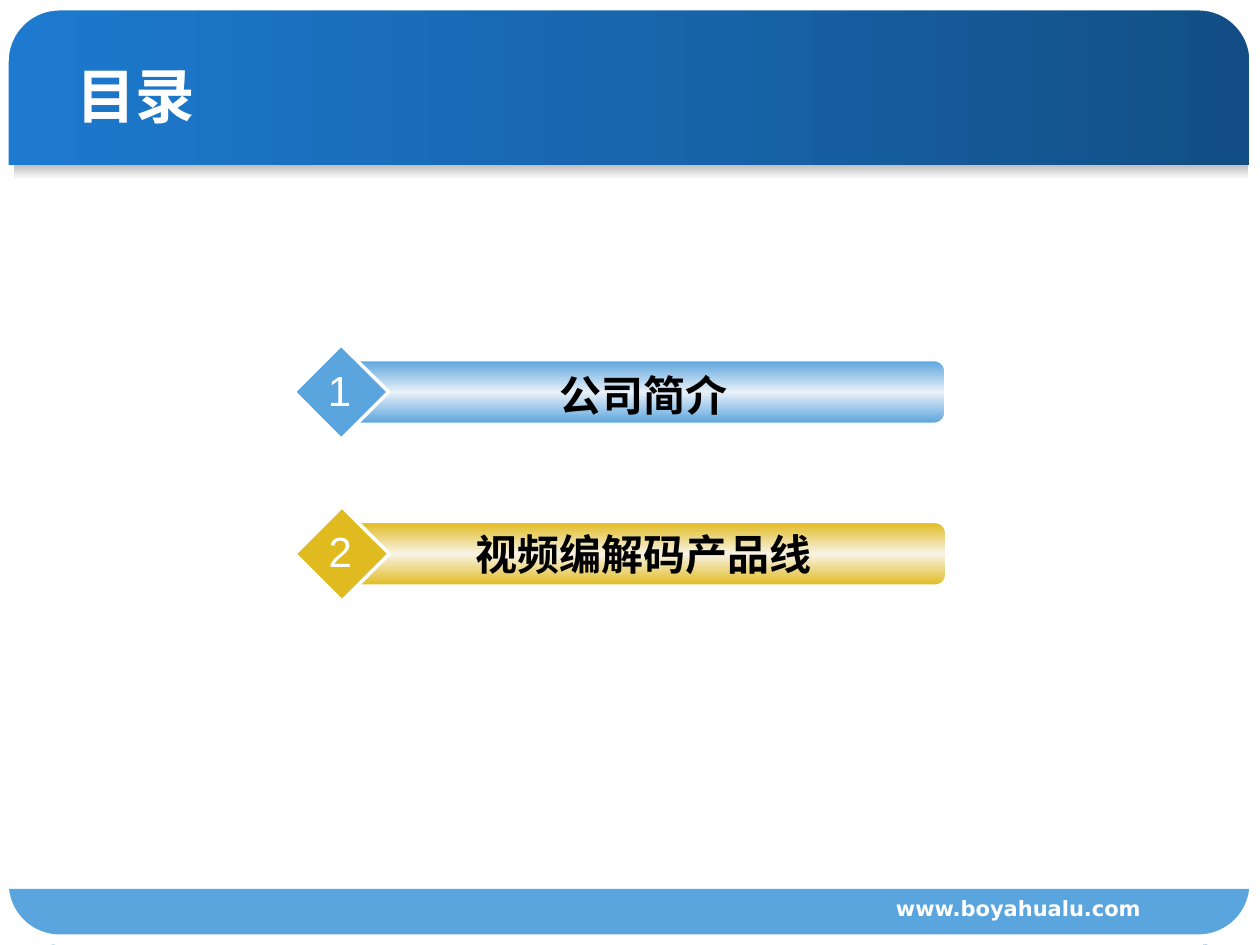
import lxml.etree
import pptx
import pptx.dml.color
import pptx.enum.shapes
import pptx.enum.text
import pptx.oxml.ns
import pptx.util

Pt = pptx.util.Pt
KIND = pptx.enum.shapes.MSO_SHAPE
ALIGN = pptx.enum.text.PP_ALIGN
ANCHOR = pptx.enum.text.MSO_ANCHOR
qn = pptx.oxml.ns.qn


def color(code):
    """Return the colour for a hex string."""
    return pptx.dml.color.RGBColor.from_string(code)


def blend(shape, stops, angle):
    """Fill a shape with evenly spaced gradient stops."""
    shape.fill.gradient()
    shape.fill.gradient_angle = angle
    group = next(shape._element.iter(qn("a:gsLst")))
    for old in list(group):
        group.remove(old)
    for index, code in enumerate(stops):
        place = round(100000 * index / (len(stops) - 1))
        stop = lxml.etree.SubElement(group, qn("a:gs"), pos=str(place))
        lxml.etree.SubElement(stop, qn("a:srgbClr"), val=code)


def style(shape, fill=None, line=None, width=1, angle=270):
    """Set the fill and line of a shape and drop its shadow."""
    shape.shadow.inherit = False
    if isinstance(fill, list):
        blend(shape, fill, angle)
    elif fill:
        shape.fill.solid()
        shape.fill.fore_color.rgb = color(fill)
    else:
        shape.fill.background()
    if line:
        shape.line.color.rgb = color(line)
        shape.line.width = Pt(width)
    else:
        shape.line.fill.background()


def block(slide, kind, box, adjust=None, **look):
    """Add a preset shape."""
    shape = slide.shapes.add_shape(kind, *map(Pt, box))
    if adjust is not None:
        shape.adjustments[0] = adjust
    style(shape, **look)


def corner(slide, points):
    """Add a white corner piece."""
    dots = [(Pt(x), Pt(y)) for x, y in points]
    build = slide.shapes.build_freeform(*dots[0])
    build.add_line_segments(dots[1:], close=True)
    style(build.convert_to_shape(), fill="FFFFFF")


def label(slide, text, box, size=24, font="Arial", ink="FFFFFF", bold=False,
          align=ALIGN.CENTER, anchor=ANCHOR.TOP, wrap=True):
    """Add a text box with one formatted line."""
    frame = slide.shapes.add_textbox(*map(Pt, box)).text_frame
    frame.word_wrap = wrap
    frame.vertical_anchor = anchor
    line = frame.paragraphs[0]
    line.alignment = align
    run = line.add_run()
    run.text = text
    run.font.size = Pt(size)
    run.font.name = font
    run.font.bold = bold
    run.font.color.rgb = color(ink)
    lxml.etree.SubElement(run._r.rPr, qn("a:ea"), typeface="Noto Sans CJK SC")


def border(slide):
    """Draw the header, the footer and the rounded frame."""
    block(slide, KIND.RECTANGLE, (0, 1, 713.5, 93.5),
          fill=["1D7ACF", "1866AE", "124E85"], angle=0)
    block(slide, KIND.RECTANGLE, (0, 508, 718.5, 32), fill="5AA5DE")
    block(slide, KIND.RECTANGLE, (8, 94.5, 705, 8), fill=["C0C0C0", "FFFFFF"])
    block(slide, KIND.ROUNDED_RECTANGLE, (2, 3, 715, 534), adjust=0.06,
          line="FFFFFF", width=6)
    corner(slide, [(0, 35), (9, 18), (19, 4), (35, 0), (0, 0)])
    corner(slide, [(30, 540), (14, 528), (3, 516), (0, 498), (0, 540)])
    corner(slide, [(720, 503), (711, 521), (702, 535), (689, 540), (720, 540)])
    corner(slide, [(684, 0), (702, 10), (716, 21), (720, 36), (720, 0)])


def entry(slide, number, text, left, top, tone, glow, drop):
    """Draw a numbered diamond with its bar and heading."""
    block(slide, KIND.ROUNDED_RECTANGLE, (left + 30, top + 9, 342, 36),
          adjust=0.17, fill=[tone, glow, tone], line="FFFFFF")
    block(slide, KIND.DIAMOND, (left, top, 54, 54), fill=tone,
          line="FFFFFF", width=2)
    label(slide, text, (232.5, top + drop, 270, 36.5), ink="000000", bold=True)
    label(slide, str(number), (left + 12, top + 7.5, 28, 36.5), wrap=False)


def main():
    """Build and save the contents slide."""
    deck = pptx.Presentation()
    deck.slide_width, deck.slide_height = Pt(720), Pt(540)
    slide = deck.slides.add_slide(deck.slide_layouts[6])
    border(slide)
    label(slide, "www.boyahualu.com", (468, 508, 228, 25), size=12,
          font="DejaVu Sans", bold=True)
    label(slide, "目录", (36.5, 31.5, 478, 45), size=34,
          font="Noto Sans CJK SC", bold=True, align=ALIGN.LEFT,
          anchor=ANCHOR.MIDDLE)
    entry(slide, 2, "视频编解码产品线", 168.5, 289.5, "E0BB20", "F9F3E6", 9)
    entry(slide, 1, "公司简介", 168, 197, "5AA5DE", "E8F0F8", 10.5)
    deck.save("out.pptx")


if __name__ == "__main__":
    main()
